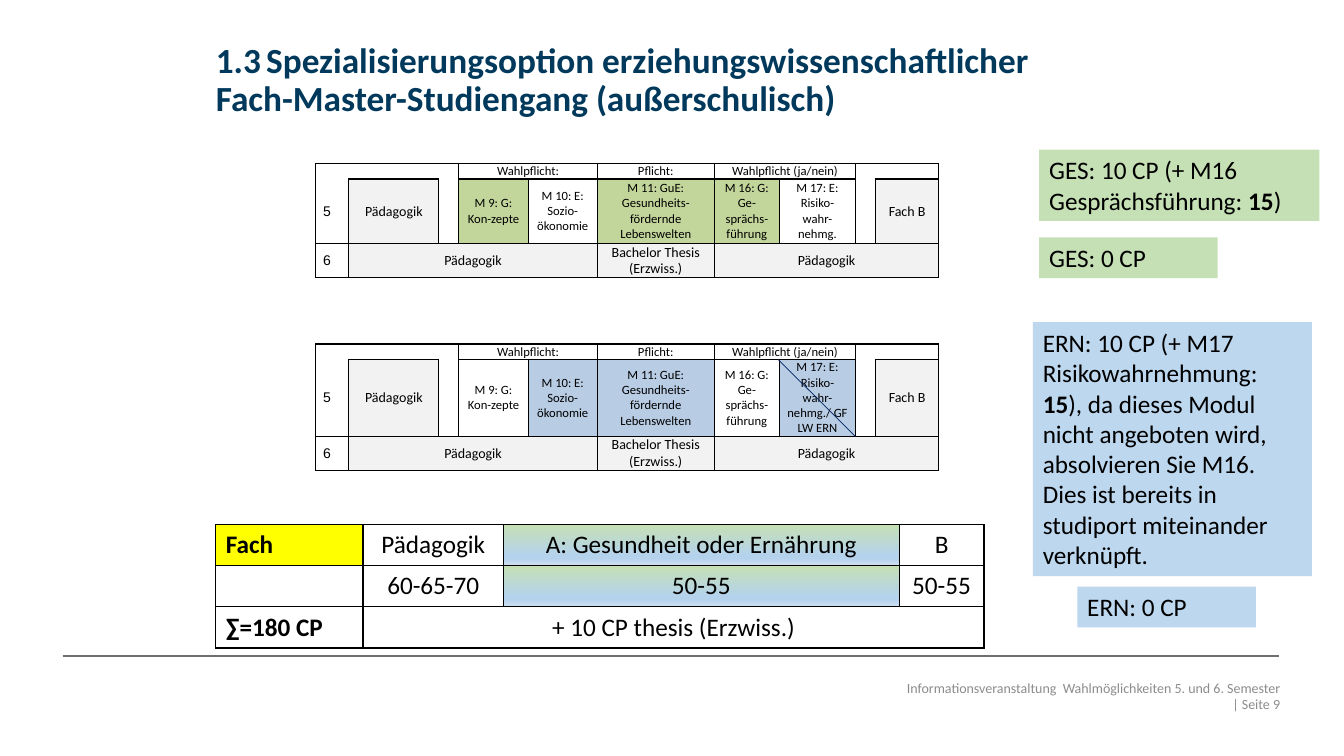
from dataclasses import dataclass
from typing import Optional, Union

from lxml import etree
from pptx import Presentation
from pptx import util as u
from pptx.dml.color import RGBColor
from pptx.enum import shapes, text
from pptx.oxml.ns import qn

Cm, Pt = u.Cm, u.Pt
LEFT, CENTER, RIGHT = text.PP_ALIGN.LEFT, text.PP_ALIGN.CENTER, text.PP_ALIGN.RIGHT
TOP, MIDDLE = text.MSO_ANCHOR.TOP, text.MSO_ANCHOR.MIDDLE


@dataclass(frozen=True)
class Theme:
    font: str = "Calibri"
    number_font: str = "Arial"
    black: str = "000000"
    title: str = "00395B"
    footer: str = "8C8C8C"
    rule: str = "6F6F6F"
    strike: str = "002060"
    grey: str = "F2F2F2"
    yellow: str = "FFFF00"
    health: str = "C2D69B"
    nutrition: str = "B8CCE4"
    health_note: str = "C5E0B4"
    nutrition_note: str = "BDD7EE"
    blend: tuple = ((0, "C5E0B4"), (74, "B5D2EC"), (83, "B5D2EC"), (100, "CEE1F2"))
    title_size: float = 25.2
    body_size: float = 18
    plan_size: float = 10
    module_size: float = 9
    footer_size: float = 10


T = Theme()


@dataclass(frozen=True)
class Style:
    size: float = T.body_size
    color: str = T.black
    bold: bool = False
    font: str = T.font
    align: text.PP_ALIGN = LEFT


@dataclass(frozen=True)
class Cell:
    text: str = ""
    style: Style = Style()
    fill: Union[str, tuple, None] = None
    span: int = 1
    sides: str = "LRTB"


@dataclass(frozen=True)
class Box:
    at: tuple
    text: str
    style: Style = Style()
    fill: Optional[str] = None
    bold_part: str = ""
    margins: tuple = (0.25, 0.13)
    anchor: text.MSO_ANCHOR = TOP
    spacing: float = 1.0


PLAN = Style(T.plan_size, align=CENTER)
MODULE = Style(T.module_size, align=CENTER)
SEMESTER = Style(T.plan_size, font=T.number_font)
BODY = Style(align=CENTER)
BOLD = Style(bold=True)


def set_all(target, values: dict) -> None:
    for name, value in values.items():
        setattr(target, name, value)


def write(tf, content: str, style: Style, bold_part: str = "") -> None:
    """Fill the first paragraph; newlines become line breaks."""
    p = tf.paragraphs[0]
    p.alignment = style.align
    before, mark, after = content.partition(bold_part) if bold_part else (content, "", "")
    for part, bold in ((before, style.bold), (mark, True), (after, style.bold)):
        for i, line in enumerate(part.split("\n")):
            if i:
                p.add_line_break()
            if line:
                r = p.add_run()
                r.text = line
                set_all(r.font, {"size": Pt(style.size), "name": style.font, "bold": bold})
                r.font.color.rgb = RGBColor.from_string(style.color)
    if not content:
        etree.SubElement(p._p, qn("a:endParaRPr"), sz=str(int(style.size * 100)))


def add_color(parent, color: str) -> None:
    etree.SubElement(parent, qn("a:srgbClr"), val=color)


def border(cell, sides: str) -> None:
    tc_pr = cell._tc.get_or_add_tcPr()
    for side in "LRTB":
        ln = etree.SubElement(tc_pr, qn(f"a:ln{side}"), w=str(Pt(1)))
        if side in sides:
            add_color(etree.SubElement(ln, qn("a:solidFill")), T.black)
        else:
            etree.SubElement(ln, qn("a:noFill"))


def paint(cell, fill) -> None:
    if fill is None:
        cell.fill.background()
    elif isinstance(fill, str):
        cell.fill.solid()
        cell.fill.fore_color.rgb = RGBColor.from_string(fill)
    else:
        grad = etree.SubElement(cell._tc.get_or_add_tcPr(), qn("a:gradFill"))
        stops = etree.SubElement(grad, qn("a:gsLst"))
        for position, color in fill:
            add_color(etree.SubElement(stops, qn("a:gs"), pos=str(position * 1000)), color)
        etree.SubElement(grad, qn("a:lin"), ang="5400000", scaled="0")


def add_grid(s, left: float, top: float, widths, heights, rows, margins) -> None:
    frame = s.shapes.add_table(len(rows), len(widths), Cm(left), Cm(top),
                               Cm(sum(widths)), Cm(sum(heights)))
    table = frame.table
    set_all(table, {"first_row": False, "horz_banding": False})
    for column, width in zip(table.columns, widths):
        column.width = Cm(width)
    x, y = (Cm(m) for m in margins)
    for i, row in enumerate(rows):
        table.rows[i].height = Cm(heights[i])
        col = 0
        for item in row:
            for k in range(item.span):
                cell = table.cell(i, col + k)
                set_all(cell, {"margin_left": x, "margin_right": x, "margin_top": y,
                               "margin_bottom": y, "vertical_anchor": MIDDLE if y == 0 else TOP})
                border(cell, item.sides)
                paint(cell, item.fill)
                write(cell.text_frame, "" if k else item.text, item.style)
            if item.span > 1:
                table.cell(i, col).merge(table.cell(i, col + item.span - 1))
            col += item.span


def plan_rows(modules, fill: str, chosen) -> list:
    """Semesters 5 and 6, with the chosen module columns coloured."""
    def gap(sides: str) -> Cell:
        return Cell("", MODULE, sides=sides)

    cells = [Cell(m, MODULE, fill if i in chosen else None) for i, m in enumerate(modules)]
    return [
        [gap("LT"), gap("TB"), gap("TR"), Cell("Wahlpflicht:", MODULE, span=2),
         Cell("Pflicht:", MODULE), Cell("Wahlpflicht (ja/nein)", MODULE, span=2),
         gap("LT"), gap("TRB")],
        [Cell("5", SEMESTER, sides="LRB"), Cell("Pädagogik", PLAN, T.grey), gap("LRB"),
         *cells, gap("LRB"), Cell("Fach B", PLAN, T.grey)],
        [Cell("6", SEMESTER), Cell("Pädagogik", PLAN, T.grey, 4),
         Cell("Bachelor Thesis\n(Erzwiss.)", PLAN, T.grey), Cell("Pädagogik", PLAN, T.grey, 4)],
    ]


def add_box(s, box: Box) -> None:
    sp = s.shapes.add_textbox(*(Cm(v) for v in box.at))
    x, y = (Cm(m) for m in box.margins)
    set_all(sp.text_frame, {"word_wrap": True, "vertical_anchor": box.anchor, "margin_left": x,
                            "margin_right": x, "margin_top": y, "margin_bottom": y})
    if box.fill:
        sp.fill.solid()
        sp.fill.fore_color.rgb = RGBColor.from_string(box.fill)
        sp.text_frame.auto_size = text.MSO_AUTO_SIZE.SHAPE_TO_FIT_TEXT
    write(sp.text_frame, box.text, box.style, box.bold_part)
    sp.text_frame.paragraphs[0].line_spacing = box.spacing


def add_line(s, ends: tuple, color: str, width: float) -> None:
    ln = s.shapes.add_connector(shapes.MSO_CONNECTOR.STRAIGHT, *(Cm(v) for v in ends))
    ln.line.color.rgb = RGBColor.from_string(color)
    ln.line.width = Pt(width)
    etree.SubElement(ln._element.spPr, qn("a:effectLst"))


MODULES = ["M 9: G: Kon-zepte", "M 10: E: Sozio-ökonomie",
           "M 11: GuE: Gesundheits-fördernde Lebenswelten", "M 16: G: Ge-sprächs-führung"]
PLAN_WIDTHS = (0.83, 2.27, 0.5, 1.75, 1.74, 2.95, 1.64, 1.92, 0.5, 1.6)
RISK = "M 17: E: Risiko-wahr-nehmg."
PLANS = [(4.12, 1.63, RISK, T.health, (0, 2, 3)),
         (8.67, 1.94, RISK + "/ GF LW ERN", T.nutrition, (1, 2, 4))]
CREDITS = [
    [Cell("Fach", BOLD, T.yellow), Cell("Pädagogik", BODY),
     Cell("A: Gesundheit oder Ernährung", BODY, T.blend), Cell("B", BODY)],
    [Cell(), Cell("60-65-70", BODY), Cell("50-55", BODY, T.blend), Cell("50-55", BODY)],
    [Cell("∑=180 CP", BOLD), Cell("+ 10 CP thesis (Erzwiss.)", BODY, span=3)],
]
BOXES = [
    Box((15.34, 16.76, 16.92, 1.55),
        "Informationsveranstaltung  Wahlmöglichkeiten 5. und 6. Semester\n| Seite 9",
        Style(T.footer_size, T.footer, align=RIGHT), margins=(0, 0), anchor=MIDDLE),
    Box((5.44, 1.04, 23.01, 2.01),
        "1.3\tSpezialisierungsoption erziehungswissenschaftlicher "
        "\tFach-Master-Studiengang (außerschulisch)",
        Style(T.title_size, T.title, True), margins=(0, 0), anchor=MIDDLE, spacing=0.9),
    Box((27.15, 14.78, 4.5, 1.03), "ERN: 0 CP", fill=T.nutrition_note),
    Box((26.19, 5.98, 4.5, 1.03), "GES: 0 CP", fill=T.health_note),
    Box((26.03, 8.12, 7.03, 6.4),
        "ERN: 10 CP (+ M17 Risikowahrnehmung: 15), da dieses Modul nicht angeboten wird, "
        "absolvieren Sie M16. Dies ist bereits in studiport miteinander verknüpft.",
        fill=T.nutrition_note, bold_part="15"),
    Box((26.19, 3.77, 7.06, 1.8), "GES: 10 CP (+ M16 Gesprächsführung: 15)",
        fill=T.health_note, bold_part="15"),
]


def main() -> None:
    prs = Presentation()
    set_all(prs, {"slide_width": Cm(33.87), "slide_height": Cm(19.05)})
    s = prs.slides.add_slide(prs.slide_layouts[6])
    add_line(s, (1.58, 16.53, 32.24, 16.53), T.rule, 0.75)
    for top, height, risk, fill, chosen in PLANS:
        add_grid(s, 7.96, top, PLAN_WIDTHS, (0.39, height, 0.86),
                 plan_rows(MODULES + [risk], fill, chosen), (0.18, 0))
    add_grid(s, 5.44, 13.22, (3.71, 3.54, 9.97, 2.14), (1.03,) * 3, CREDITS, (0.25, 0.13))
    for box in BOXES:
        add_box(s, box)
    add_line(s, (19.61, 9.06, 21.56, 11), T.strike, 0.5)
    prs.save("out.pptx")


if __name__ == "__main__":
    main()
